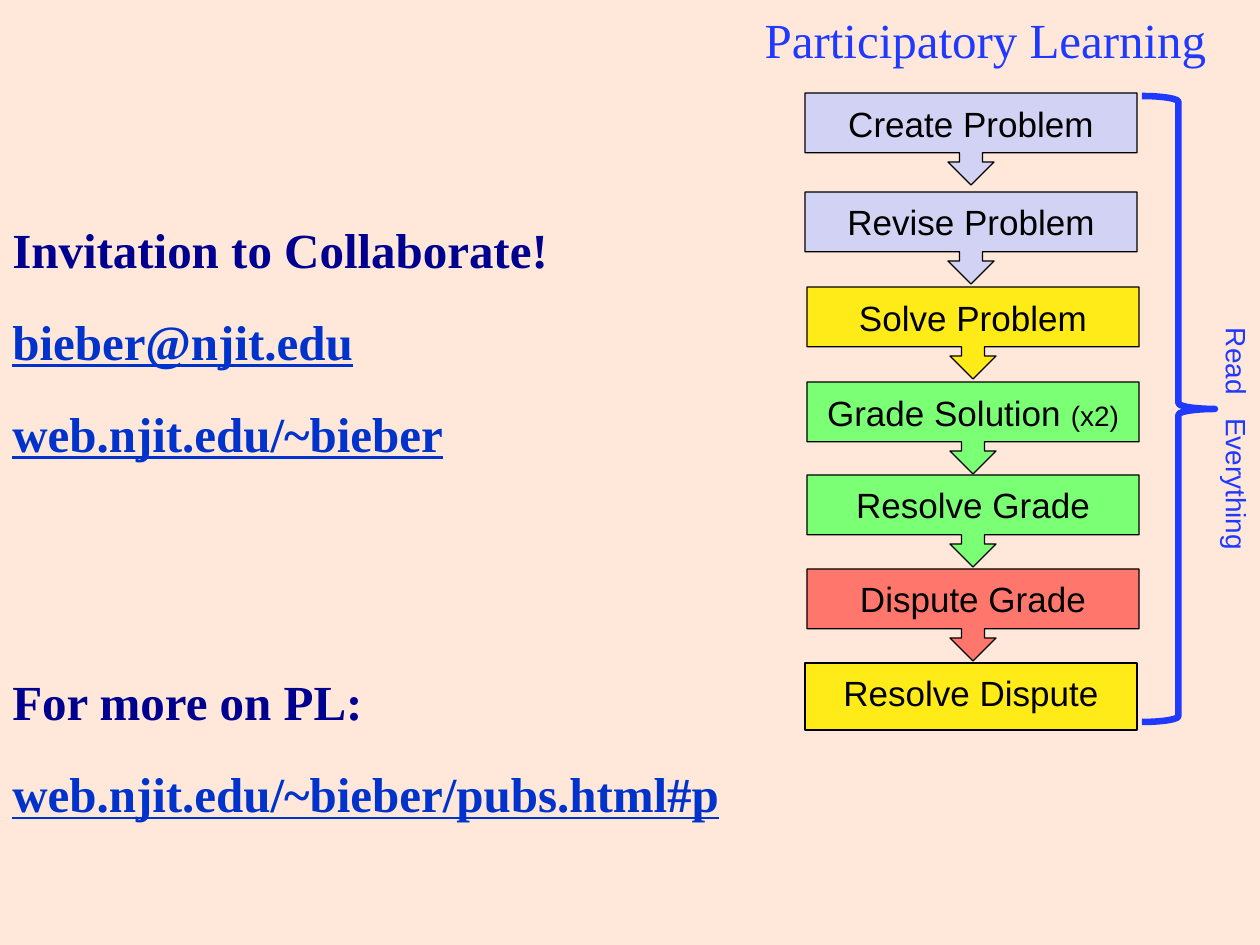
"""Build the Participatory Learning slide: contact links beside a seven-step workflow."""
from pptx import Presentation
from pptx import util as u
from pptx.dml.color import RGBColor
from pptx.enum import shapes, text

PX = 914400 / 126
PEACH = RGBColor(0xFF, 0xE8, 0xD9)
BLACK = RGBColor(0x00, 0x00, 0x00)
LAVENDER = RGBColor(0xD2, 0xD2, 0xF4)
YELLOW = RGBColor(0xFF, 0xEB, 0x18)
GREEN = RGBColor(0x7B, 0xFF, 0x75)
CORAL = RGBColor(0xFF, 0x77, 0x6C)
BLUE = RGBColor(0x20, 0x39, 0xFF)
NAVY = RGBColor(0x00, 0x00, 0x90)
LINK = RGBColor(0x00, 0x33, 0xCC)


def px(*lengths):
    return [u.Emu(round(n * PX)) for n in lengths]


def add_run(p, words, color, size, name, **formats):
    r = p.add_run()
    r.text = words
    r.font.color.rgb = color
    for key, value in dict(size=u.Pt(size), name=name, **formats).items():
        setattr(r.font, key, value)
    return r


prs = Presentation()
prs.slide_width, prs.slide_height = px(1260, 945)
s = prs.slides.add_slide(prs.slide_layouts[6])
s.background.fill.solid()
s.background.fill.fore_color.rgb = PEACH

CALLOUT = shapes.MSO_SHAPE.DOWN_ARROW_CALLOUT
steps = [
    (805, 93, 92, CALLOUT, LAVENDER, "Create Problem", ""),
    (805, 192, 92, CALLOUT, LAVENDER, "Revise Problem", ""),
    (807, 287, 92, CALLOUT, YELLOW, "Solve Problem", ""),
    (807, 382, 92, CALLOUT, GREEN, "Grade Solution ", "(x2)"),
    (807, 475, 92, CALLOUT, GREEN, "Resolve Grade", ""),
    (807, 569, 92, CALLOUT, CORAL, "Dispute Grade", ""),
    (805, 663, 67, shapes.MSO_SHAPE.RECTANGLE, YELLOW, "Resolve Dispute", ""),
]
for left, top, height, kind, color, label, suffix in steps:
    sp = s.shapes.add_shape(kind, *px(left, top, 332, height))
    sp.shadow.inherit = False
    sp.fill.solid()
    sp.fill.fore_color.rgb = color
    sp.line.color.rgb = BLACK
    sp.line.width = u.Pt(0.75)
    tf = sp.text_frame
    tf.word_wrap = True
    tf.vertical_anchor = text.MSO_ANCHOR.TOP
    tf.margin_top = px(9)[0]
    p = tf.paragraphs[0]
    p.alignment = text.PP_ALIGN.CENTER
    add_run(p, label, BLACK, 20, "Arial")
    if suffix:
        add_run(p, suffix, BLACK, 16, "Arial")

brace = s.shapes.add_shape(shapes.MSO_SHAPE.RIGHT_BRACE, *px(1142, 96, 73, 626))
brace.shadow.inherit = False
brace.adjustments[0], brace.adjustments[1] = 0.08, 0.5
brace.fill.background()
brace.line.color.rgb = BLUE
brace.line.width = u.Pt(3.75)

tf = s.shapes.add_textbox(*px(1201, 315, 59, 248)).text_frame
tf.word_wrap = True
tf._txBody.bodyPr.set("vert", "vert")
p = tf.paragraphs[0]
p.alignment = text.PP_ALIGN.CENTER
add_run(p, "Read", BLUE, 16, "Arial")
gap = add_run(p, " ", BLUE, 16, "Arial")
gap.font._element.set("spc", "890")
add_run(p, "Everything", BLUE, 16, "Arial")

tf = s.shapes.add_textbox(*px(711, 3, 549, 72)).text_frame
tf.word_wrap = True
p = tf.paragraphs[0]
p.alignment = text.PP_ALIGN.CENTER
add_run(p, "Participatory Learning", BLUE, 28, "Times New Roman")

tf = s.shapes.add_textbox(*px(0, 184, 766, 726)).text_frame
tf.word_wrap = True
contacts = [
    ("Invitation to Collaborate!", NAVY, False, 0),
    ("bieber@njit.edu", LINK, True, 2),
    ("web.njit.edu/~bieber", LINK, True, 2),
    ("For more on PL:", NAVY, False, 103),
    ("web.njit.edu/~bieber/pubs.html#p", LINK, True, 2),
]
for i, (words, color, underline, before) in enumerate(contacts):
    p = tf.add_paragraph() if i else tf.paragraphs[0]
    p.line_spacing = 1.5
    if before:
        p.space_before = u.Pt(before)
    add_run(p, words, color, 28, "Times New Roman", bold=True, underline=underline)

prs.save("out.pptx")
